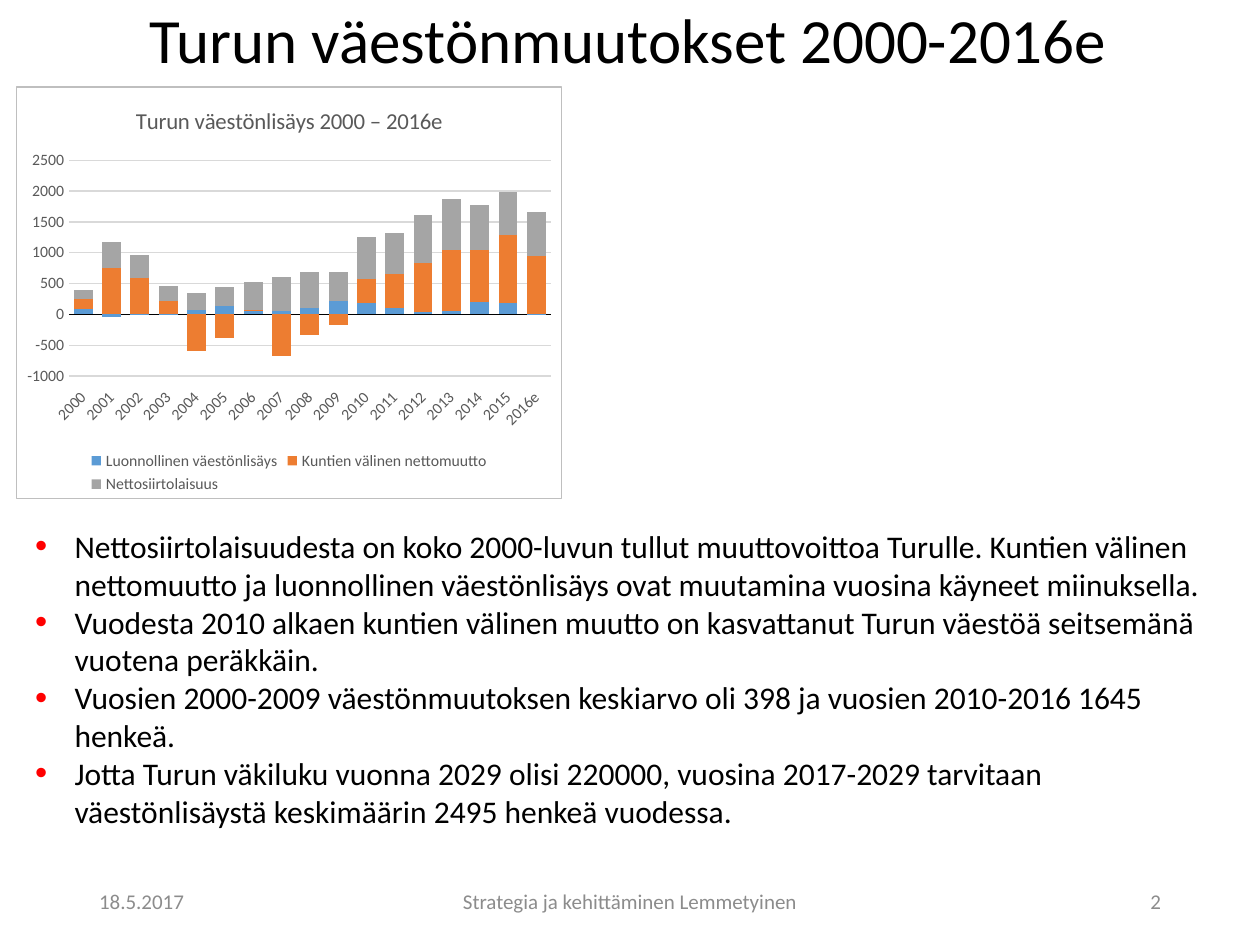
import dataclasses

import pptx
import pptx.chart.data
import pptx.dml.color
import pptx.enum.chart
import pptx.enum.text
import pptx.oxml
import pptx.oxml.ns
import pptx.util

Pt = pptx.util.Pt
RGB = pptx.dml.color.RGBColor.from_string
ALIGN = pptx.enum.text.PP_ALIGN
ANCHOR = pptx.enum.text.MSO_ANCHOR


@dataclasses.dataclass(frozen=True)
class Theme:
    font: str = "Calibri"
    text: str = "000000"
    muted: str = "8C8C8C"
    chart_text: str = "595959"
    grid: str = "D9D9D9"
    border: str = "BFBFBF"
    bullet: str = "FF0000"
    series: tuple = ("5B9BD5", "ED7D31", "A5A5A5")
    title_size: int = 36
    body_size: int = 18
    footer_size: int = 12
    chart_title_size: int = 13
    chart_size: int = 9


THEME = Theme()

TITLE = "Turun väestönmuutokset 2000-2016e"
CHART_TITLE = "Turun väestönlisäys 2000 – 2016e"
YEARS = [str(year) for year in range(2000, 2016)] + ["2016e"]
# Values hold two significant digits
POPULATION_CHANGE = {
    "Luonnollinen väestönlisäys":
        (90, -40, -10, 10, 70, 130, 50, 60, 100, 220, 180, 110, 30, 60, 200, 190, 10),
    "Kuntien välinen nettomuutto":
        (160, 760, 590, 200, -590, -390, 20, -670, -330, -170, 400, 540, 810, 990, 850, 1100, 930),
    "Nettosiirtolaisuus":
        (150, 420, 380, 250, 280, 320, 450, 550, 580, 470, 670, 670, 770, 820, 730, 690, 720),
}
FINDINGS = (
    "Nettosiirtolaisuudesta on koko 2000-luvun tullut muuttovoittoa Turulle. Kuntien välinen "
    "nettomuutto ja luonnollinen väestönlisäys ovat muutamina vuosina käyneet miinuksella.",
    "Vuodesta 2010 alkaen kuntien välinen muutto on kasvattanut Turun väestöä seitsemänä "
    "vuotena peräkkäin.",
    "Vuosien 2000-2009 väestönmuutoksen keskiarvo oli 398 ja vuosien 2010-2016 1645 henkeä.",
    "Jotta Turun väkiluku vuonna 2029 olisi 220000, vuosina 2017-2029 tarvitaan "
    "väestönlisäystä keskimäärin 2495 henkeä vuodessa.",
)
# Text, left, width and alignment of each footer part
FOOTER = (
    ("18.5.2017", 49.5, 162, ALIGN.LEFT),
    ("Strategia ja kehittäminen Lemmetyinen", 238.5, 243, ALIGN.CENTER),
    ("2", 508.5, 162, ALIGN.RIGHT),
)


def style_font(font, size, color):
    font.name = THEME.font
    font.size = Pt(size)
    font.bold = False
    font.color.rgb = RGB(color)


def add_span(para, text, size, color):
    span = para.add_run()
    span.text = text
    style_font(span.font, size, color)


def add_box(page, left, top, width, height, anchor):
    box = page.shapes.add_textbox(Pt(left), Pt(top), Pt(width), Pt(height))
    box.text_frame.word_wrap = True
    box.text_frame.vertical_anchor = anchor
    return box


def set_title(page):
    title = page.shapes.title
    title.left, title.top, title.width, title.height = Pt(53), Pt(9.4), Pt(612), Pt(38.2)
    frame = title.text_frame
    frame.vertical_anchor = ANCHOR.BOTTOM
    frame.auto_size = pptx.enum.text.MSO_AUTO_SIZE.NONE
    para = frame.paragraphs[0]
    para.alignment = ALIGN.CENTER
    para.line_spacing = 0.9
    add_span(para, TITLE, THEME.title_size, THEME.text)


def add_bullet(para):
    properties = para._p.get_or_add_pPr()
    properties.set("marL", str(Pt(22.5)))
    properties.set("indent", str(-Pt(22.5)))
    namespace = pptx.oxml.ns.nsdecls("a")
    for markup in (
        f'<a:buClr {namespace}><a:srgbClr val="{THEME.bullet}"/></a:buClr>',
        f'<a:buSzPct {namespace} val="110000"/>',
        f'<a:buFont {namespace} typeface="Arial"/>',
        f'<a:buChar {namespace} char="•"/>',
    ):
        properties.append(pptx.oxml.parse_xml(markup))


def add_findings(page):
    frame = add_box(page, 13, 297.6, 696.2, 181.4, ANCHOR.TOP).text_frame
    for index, finding in enumerate(FINDINGS):
        para = frame.add_paragraph() if index else frame.paragraphs[0]
        add_bullet(para)
        add_span(para, finding, THEME.body_size, THEME.text)


def style_axes(chart):
    tick_none = pptx.enum.chart.XL_TICK_MARK.NONE
    years, values = chart.category_axis, chart.value_axis
    for axis in (years, values):
        axis.major_tick_mark = axis.minor_tick_mark = tick_none
        style_font(axis.tick_labels.font, THEME.chart_size, THEME.chart_text)
    years.tick_label_position = pptx.enum.chart.XL_TICK_LABEL_POSITION.LOW
    years.format.line.color.rgb = RGB(THEME.text)
    years.format.line.width = Pt(0.25)
    # Slanted year labels
    years._element.find(".//" + pptx.oxml.ns.qn("a:bodyPr")).set("rot", "-2700000")
    values.minimum_scale, values.maximum_scale, values.major_unit = -1000, 2500, 500
    values.format.line.fill.background()
    grid = values.major_gridlines.format.line
    grid.color.rgb = RGB(THEME.grid)
    grid.width = Pt(0.75)


def add_chart_border(chart):
    border = pptx.oxml.parse_xml(
        f'<c:spPr {pptx.oxml.ns.nsdecls("c", "a")}><a:noFill/><a:ln w="{Pt(0.75)}">'
        f'<a:solidFill><a:srgbClr val="{THEME.border}"/></a:solidFill></a:ln></c:spPr>')
    chart._chartSpace.find(pptx.oxml.ns.qn("c:chart")).addnext(border)


def add_population_chart(page):
    data = pptx.chart.data.CategoryChartData()
    data.categories = YEARS
    for name, values in POPULATION_CHANGE.items():
        data.add_series(name, values)
    chart = page.shapes.add_chart(
        pptx.enum.chart.XL_CHART_TYPE.COLUMN_STACKED,
        Pt(9), Pt(49.3), Pt(312.2), Pt(235.8), data).chart
    style_font(chart.font, 10, THEME.text)

    # Title and legend
    chart.has_title = True
    add_span(chart.chart_title.text_frame.paragraphs[0], CHART_TITLE,
             THEME.chart_title_size, THEME.chart_text)
    chart.chart_title.include_in_layout = False
    chart.has_legend = True
    chart.legend.position = pptx.enum.chart.XL_LEGEND_POSITION.BOTTOM
    chart.legend.include_in_layout = False
    style_font(chart.legend.font, THEME.chart_size, THEME.chart_text)

    # Columns
    plot = chart.plots[0]
    plot.gap_width, plot.overlap, plot.vary_by_categories = 50, 100, False
    for series, color in zip(plot.series, THEME.series):
        series.invert_if_negative = False
        series.format.fill.solid()
        series.format.fill.fore_color.rgb = RGB(color)
    style_axes(chart)
    add_chart_border(chart)


def add_footer(page):
    for text, left, width, alignment in FOOTER:
        para = add_box(page, left, 500.5, width, 28.8, ANCHOR.MIDDLE).text_frame.paragraphs[0]
        para.alignment = alignment
        add_span(para, text, THEME.footer_size, THEME.muted)


def main():
    deck = pptx.Presentation()
    deck.slide_width, deck.slide_height = Pt(720), Pt(540)
    page = deck.slides.add_slide(deck.slide_layouts.get_by_name("Title Only"))
    set_title(page)
    add_findings(page)
    add_population_chart(page)
    add_footer(page)
    deck.save("out.pptx")


if __name__ == "__main__":
    main()
